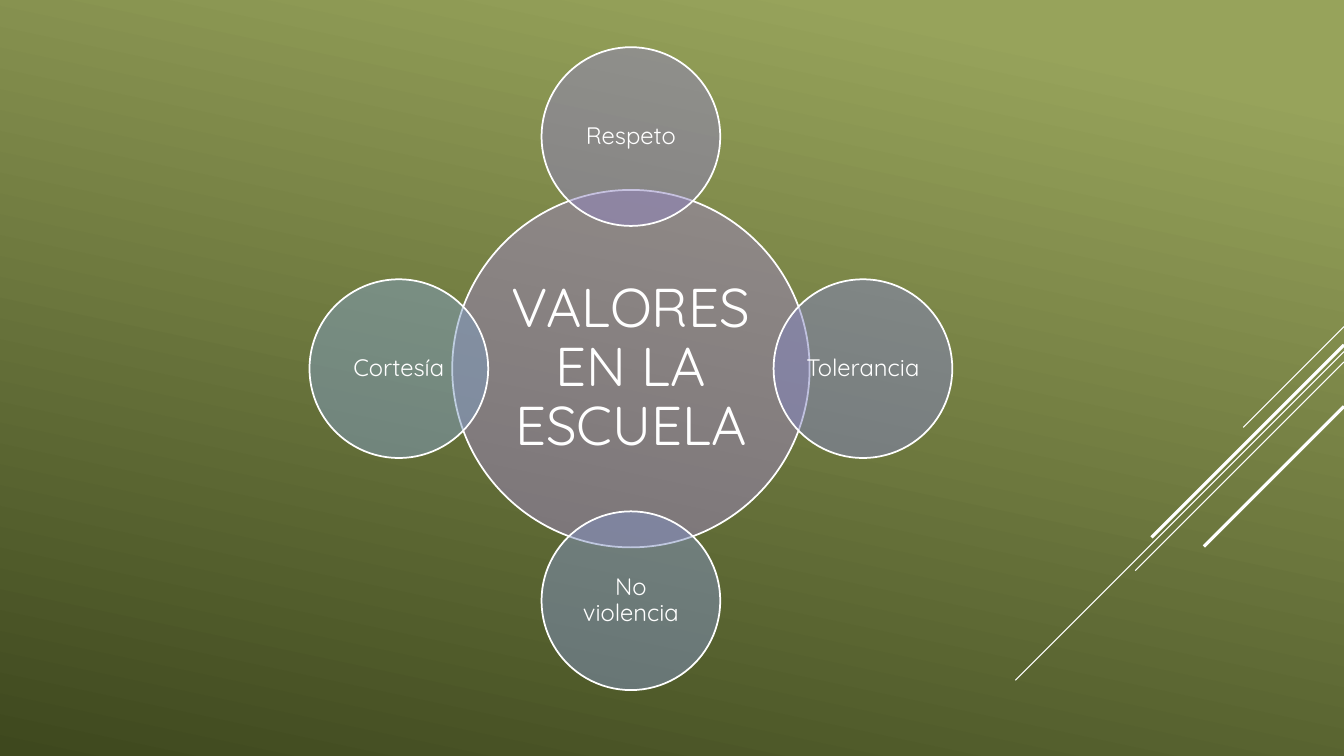
from lxml import etree
from pptx import Presentation
from pptx.dml.color import RGBColor
from pptx.enum.shapes import MSO_CONNECTOR, MSO_SHAPE
from pptx.enum.text import MSO_ANCHOR, PP_ALIGN
from pptx.oxml.ns import qn
from pptx.util import Cm, Pt

STRAIGHT = MSO_CONNECTOR.STRAIGHT
ELLIPSE = MSO_SHAPE.OVAL
MIDDLE = MSO_ANCHOR.MIDDLE
CENTER = PP_ALIGN.CENTER

WHITE = RGBColor(0xFF, 0xFF, 0xFF)
OLIVE_LIGHT = RGBColor(0x97, 0xA3, 0x5B)
OLIVE_DARK = RGBColor(0x3E, 0x48, 0x1E)
HUB_COLOR = RGBColor(0x9C, 0x85, 0xC0)

SLIDE_WIDTH, SLIDE_HEIGHT = 33.87, 19.05
FONT = "Quicksand"
OPACITY = 50

# Diagonal lines: distance from the top at the right edge, run, weight in points
DIAGONALS = [
    (8.23, 2.54, 0.75),
    (8.86, 8.28, 0.75),
    (9.12, 5.26, 0.75),
    (8.69, 4.85, 2.25),
    (10.24, 3.53, 2.25),
]

# Outer circles: text, colour, direction from the hub
VALUES = [
    ("Respeto", RGBColor(0x8F, 0x84, 0xC0), (0, -1)),
    ("Tolerancia", RGBColor(0x83, 0x85, 0xC1), (1, 0)),
    ("No violencia", RGBColor(0x81, 0x91, 0xC1), (0, 1)),
    ("Cortesía", RGBColor(0x80, 0x9E, 0xC2), (-1, 0)),
]


def set_attributes(target, values):
    for name, value in values.items():
        setattr(target, name, value)


def paint_background(slide):
    fill = slide.background.fill
    fill.gradient()
    fill.gradient_angle = 360 - 102
    stops = [(0.1, OLIVE_LIGHT), (1, OLIVE_DARK)]
    for stop, (position, color) in zip(fill.gradient_stops, stops):
        stop.position = position
        stop.color.rgb = color


def add_diagonals(slide, left, top, width):
    """Draw 45-degree lines falling to the left from the right edge of the box."""
    right = left + width
    for drop, run, weight in DIAGONALS:
        start = top + drop
        line = slide.shapes.add_connector(
            STRAIGHT, Cm(right), Cm(start), Cm(right - run), Cm(start + run))
        line.line.color.rgb = WHITE
        line.line.width = Pt(weight)
        etree.SubElement(line._element.spPr, qn("a:effectLst"))


def add_circle(slide, center_x, center_y, diameter, text, color, size, inset):
    circle = slide.shapes.add_shape(
        ELLIPSE, Cm(center_x - diameter / 2), Cm(center_y - diameter / 2),
        Cm(diameter), Cm(diameter))
    circle.shadow.inherit = False
    circle.fill.solid()
    circle.fill.fore_color.rgb = color
    # Transparency
    color_element = circle._element.spPr.find(qn("a:solidFill"))[0]
    etree.SubElement(color_element, qn("a:alpha"), val=str(OPACITY * 1000))
    circle.line.color.rgb = WHITE
    circle.line.width = Pt(1.25)

    # Label
    frame = circle.text_frame
    margins = ("margin_left", "margin_top", "margin_right", "margin_bottom")
    set_attributes(frame, {"word_wrap": True, "vertical_anchor": MIDDLE,
                           **dict.fromkeys(margins, Cm(inset))})
    paragraph = frame.paragraphs[0]
    set_attributes(paragraph, {"alignment": CENTER, "line_spacing": 0.9})
    run = paragraph.add_run()
    run.text = text
    set_attributes(run.font, {"name": FONT, "size": Pt(size)})
    run.font.color.rgb = WHITE


def add_radial_diagram(slide, left, top, side):
    """Place a hub and four outer circles, each overlapping it, in a square box."""
    hub = side * 0.556
    outer = hub / 2
    center_x, center_y = left + side / 2, top + side / 2
    reach = (side - outer) / 2
    add_circle(slide, center_x, center_y, hub,
               "VALORES EN LA ESCUELA", HUB_COLOR, 39, 0.13)
    for text, color, (across, down) in VALUES:
        add_circle(slide, center_x + across * reach, center_y + down * reach,
                   outer, text, color, 17, 0.05)


def build_slide(presentation):
    slide = presentation.slides.add_slide(presentation.slide_layouts[6])
    paint_background(slide)
    add_diagonals(slide, 0, 0, SLIDE_WIDTH)
    add_radial_diagram(slide, 7.8, 1.19, 16.2)


def main():
    presentation = Presentation()
    presentation.slide_width = Cm(SLIDE_WIDTH)
    presentation.slide_height = Cm(SLIDE_HEIGHT)
    build_slide(presentation)
    presentation.save("out.pptx")


if __name__ == "__main__":
    main()
